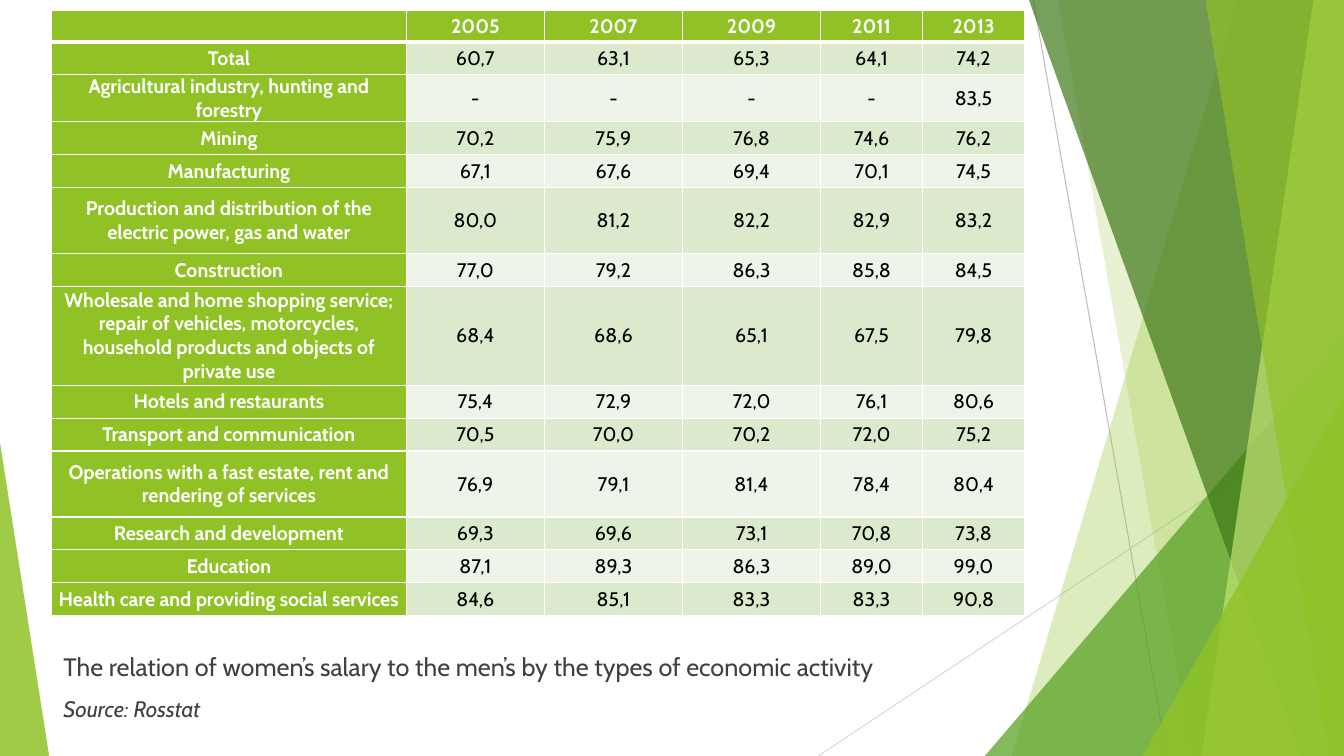
"""Build the slide with women's salary relative to men's by economic activity."""
from dataclasses import dataclass

from lxml.etree import SubElement
from pptx import Presentation
from pptx.dml.color import RGBColor
from pptx.enum.shapes import MSO_CONNECTOR as CONN, MSO_SHAPE as SHAPE
from pptx.enum.text import MSO_ANCHOR as ANCHOR, PP_ALIGN as ALIGN
from pptx.oxml import parse_xml
from pptx.oxml.ns import nsdecls, qn
from pptx.util import Cm, Pt

WIDTH, HEIGHT = 33.87, 19.05
FONT, GREEN, WHITE = "Cabin", "90C226", "FFFFFF"
BANDS = "DBE9CD", "EEF4E8"
ROW_UNIT, HEADER_HEIGHT = 0.83, 0.79
COLUMNS = 8.94, 3.48, 3.48, 3.48, 2.57, 2.57


@dataclass
class Ray:
    x1: float
    y1: float
    x2: float
    y2: float
    color: str


@dataclass
class Panel:
    top_left: float
    bottom_left: float
    color: str
    alpha: int


@dataclass
class Wedge:
    left: float
    top: float
    width: float
    apex: int
    color: str
    alpha: int


@dataclass
class Activity:
    name: str
    values: str
    units: int = 1


RAYS = [
    Ray(26.04, 0, 29.41, HEIGHT, "BFBFBF"),
    Ray(WIDTH, 10.24, 20.62, HEIGHT, "D9D9D9"),
]
FACETS = [
    Panel(31.19, 25.5, GREEN, 30),
    Panel(26.67, 30.05, GREEN, 20),
    Wedge(24.82, 8.46, 9.05, 1, "54A021", 72),
    Panel(25.93, 32.79, "3F7819", 70),
    Panel(33.1, 30.28, "C0E474", 70),
    Panel(30.38, 33.48, GREEN, 65),
    Wedge(28.8, 9.98, 5.07, 1, GREEN, 80),
    Wedge(0, 11.15, 1.24, 0, GREEN, 85),
]
YEARS = ["", "2005", "2007", "2009", "2011", "2013"]
ACTIVITIES = [
    Activity("Total", "60,7 63,1 65,3 64,1 74,2"),
    Activity("Agricultural industry, hunting and forestry", "- - - - 83,5"),
    Activity("Mining", "70,2 75,9 76,8 74,6 76,2"),
    Activity("Manufacturing", "67,1 67,6 69,4 70,1 74,5"),
    Activity("Production and distribution of the electric power, gas and water",
             "80,0 81,2 82,2 82,9 83,2", 2),
    Activity("Construction", "77,0 79,2 86,3 85,8 84,5"),
    Activity("Wholesale and home shopping service; repair of vehicles, motorcycles, "
             "household products and objects of private use",
             "68,4 68,6 65,1 67,5 79,8", 3),
    Activity("Hotels and restaurants", "75,4 72,9 72,0 76,1 80,6"),
    Activity("Transport and communication", "70,5 70,0 70,2 72,0 75,2"),
    Activity("Operations with a fast estate, rent and rendering of services",
             "76,9 79,1 81,4 78,4 80,4", 2),
    Activity("Research and development", "69,3 69,6 73,1 70,8 73,8"),
    Activity("Education", "87,1 89,3 86,3 89,0 99,0"),
    Activity("Health care and providing social services", "84,6 85,1 83,3 83,3 90,8"),
]


def rgb(color: str) -> RGBColor:
    return RGBColor.from_string(color)


def write(p, text: str, *, size: int, color: str, bold=False, italic=False,
          align=ALIGN.LEFT, before=0) -> None:
    p.alignment, p.space_before = align, Pt(before)
    r = p.add_run()
    r.text = text
    f = r.font
    f.name, f.size, f.bold, f.italic = FONT, Pt(size), bold, italic
    f.color.rgb = rgb(color)


def draw_ray(s, ray: Ray) -> None:
    cn = s.shapes.add_connector(CONN.STRAIGHT, Cm(ray.x1), Cm(ray.y1), Cm(ray.x2), Cm(ray.y2))
    cn.line.color.rgb = rgb(ray.color)
    cn.line.width = Pt(0.75)
    SubElement(cn._element.spPr, qn("a:effectLst"))


def add_panel(s, panel: Panel):
    fb = s.shapes.build_freeform(Cm(panel.top_left), 0)
    fb.add_line_segments([(Cm(WIDTH), 0), (Cm(WIDTH), Cm(HEIGHT)),
                          (Cm(panel.bottom_left), Cm(HEIGHT))], close=True)
    return fb.convert_to_shape()


def add_wedge(s, wedge: Wedge):
    sp = s.shapes.add_shape(SHAPE.ISOSCELES_TRIANGLE, Cm(wedge.left), Cm(wedge.top),
                            Cm(wedge.width), Cm(HEIGHT - wedge.top))
    sp.adjustments[0] = wedge.apex
    return sp


def draw_facet(s, facet: Panel | Wedge) -> None:
    sp = add_panel(s, facet) if isinstance(facet, Panel) else add_wedge(s, facet)
    sp.shadow.inherit = False
    sp.line.fill.background()
    sp.fill.solid()
    sp.fill.fore_color.rgb = rgb(facet.color)
    clr = sp._element.spPr.find(".//" + qn("a:srgbClr"))
    SubElement(clr, qn("a:alpha"), val=str(facet.alpha * 1000))


def set_borders(cell, top: int, bottom: int) -> None:
    tc_pr = cell._tc.get_or_add_tcPr()
    for i, (side, width) in enumerate(zip("LRTB", (1, 1, top, bottom))):
        tc_pr.insert(i, parse_xml(
            f'<a:ln{side} {nsdecls("a")} w="{Pt(width)}"><a:solidFill>'
            f'<a:srgbClr val="{WHITE}"/></a:solidFill></a:ln{side}>'))


def fill_cell(cell, text: str, row: int, col: int) -> None:
    heading = row == 0 or col == 0
    cell.vertical_anchor = ANCHOR.MIDDLE
    cell.margin_left = cell.margin_right = Cm(0.18)
    cell.margin_top = cell.margin_bottom = 0
    cell.fill.solid()
    cell.fill.fore_color.rgb = rgb(GREEN if heading else BANDS[(row - 1) % 2])
    set_borders(cell, top=3 if row == 1 else 1, bottom=3 if row == 0 else 1)
    write(cell.text_frame.paragraphs[0], text, size=14, bold=heading,
          color=WHITE if heading else "000000", align=ALIGN.CENTER, before=6)


def draw_table(s) -> None:
    rows = [YEARS] + [[a.name, *a.values.split()] for a in ACTIVITIES]
    heights = [HEADER_HEIGHT] + [a.units * ROW_UNIT for a in ACTIVITIES]
    tbl = s.shapes.add_table(len(rows), len(COLUMNS), Cm(1.3), Cm(0.26),
                             Cm(sum(COLUMNS)), Cm(sum(heights))).table
    for column, width in zip(tbl.columns, COLUMNS):
        column.width = Cm(width)
    for i, (texts, height) in enumerate(zip(rows, heights)):
        tbl.rows[i].height = Cm(height)
        for j, text in enumerate(texts):
            fill_cell(tbl.cell(i, j), text, i, j)


def draw_caption(s) -> None:
    tf = s.shapes.add_textbox(Cm(1.35), Cm(15.9), Cm(24.41), Cm(2.82)).text_frame
    tf.word_wrap = True
    tf.vertical_anchor = ANCHOR.MIDDLE
    write(tf.paragraphs[0], "The relation of women’s salary to the men’s by the types of "
          "economic activity", size=18, color="404040", before=10)
    write(tf.add_paragraph(), "Source: Rosstat", size=16, color="404040",
          italic=True, before=10)


def main() -> None:
    prs = Presentation()
    prs.slide_width, prs.slide_height = Cm(WIDTH), Cm(HEIGHT)
    s = prs.slides.add_slide(prs.slide_layouts[6])
    for ray in RAYS:
        draw_ray(s, ray)
    for facet in FACETS:
        draw_facet(s, facet)
    draw_caption(s)
    draw_table(s)
    prs.save("out.pptx")


if __name__ == "__main__":
    main()
